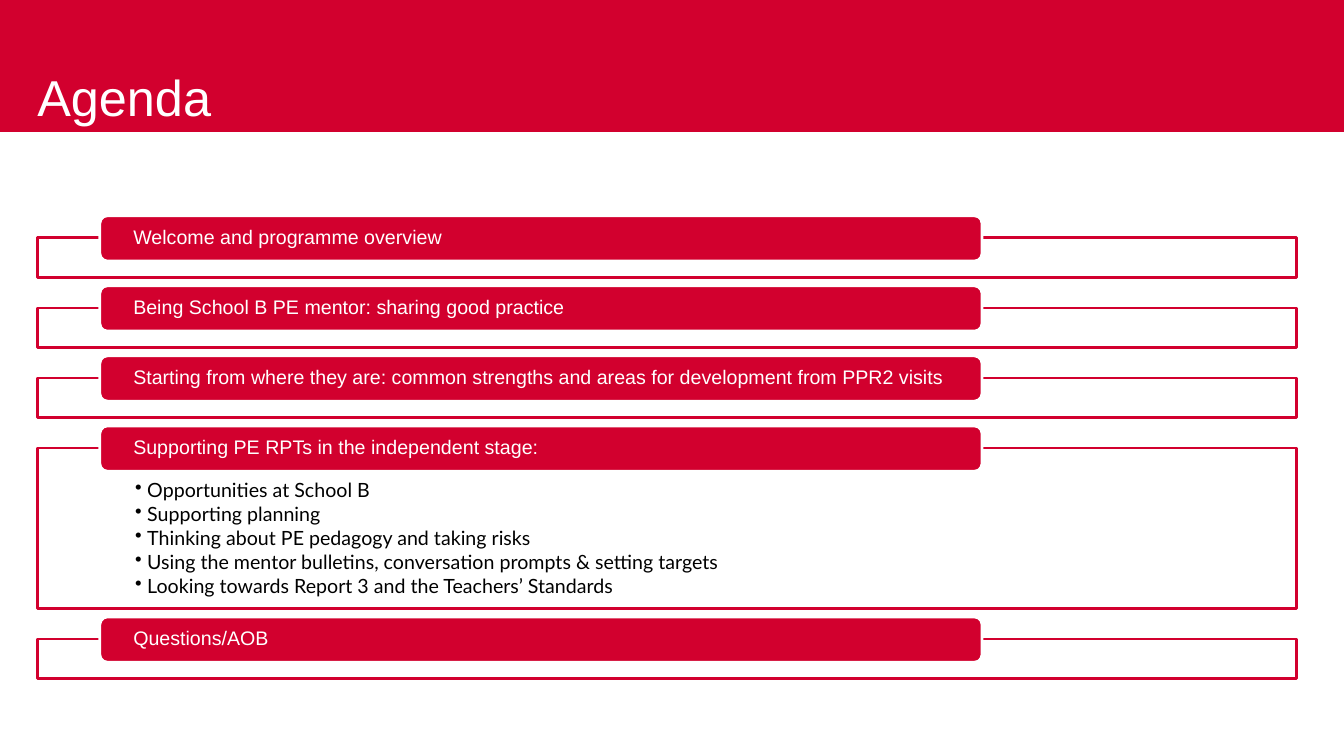
from lxml.etree import SubElement as Sub
from pptx import Presentation
from pptx.dml.color import RGBColor
from pptx.enum.shapes import MSO_SHAPE as Kind
from pptx.enum.text import MSO_ANCHOR as Anchor, MSO_AUTO_SIZE as Fit, PP_ALIGN as Align
from pptx.oxml.ns import qn
from pptx.util import Inches, Pt

RED = RGBColor(0xD2, 0x00, 0x2E)
WHITE = RGBColor(0xFF, 0xFF, 0xFF)
BLACK = RGBColor(0x00, 0x00, 0x00)

WIDE, HIGH = 13.33, 7.5
LEFT, SPAN = 0.37, 12.49
TOP, GAP = 2.36, 0.305
LOW, TALL = 0.39, 1.59

AGENDA = [
    ("Welcome and programme overview", []),
    ("Being School B PE mentor: sharing good practice", []),
    ("Starting from where they are: common strengths and areas "
     "for development from PPR2 visits", []),
    ("Supporting PE RPTs in the independent stage:", [
        "Opportunities at School B",
        "Supporting planning",
        "Thinking about PE pedagogy and taking risks",
        "Using the mentor bulletins, conversation prompts & setting targets",
        "Looking towards Report 3 and the Teachers’ Standards",
    ]),
    ("Questions/AOB", []),
]


def put(item, **values):
    for name, value in values.items():
        setattr(item, name, value)


def set_frame(frame, anchor, left=0, top=0, right=0, bottom=0):
    put(frame, word_wrap=True, auto_size=Fit.NONE, vertical_anchor=anchor,
        margin_left=Inches(left), margin_top=Inches(top),
        margin_right=Inches(right), margin_bottom=Inches(bottom))


def set_text(para, text, face, size, color, space=0.9, after=0):
    para.text = text
    put(para, alignment=Align.LEFT, line_spacing=space, space_after=Pt(after))
    put(para.font, name=face, size=Pt(size))
    para.font.color.rgb = color


def add_box(slide, kind, area, fill, line=None):
    box = slide.shapes.add_shape(kind, *map(Inches, area))
    box.shadow.inherit = False
    box.fill.solid()
    box.fill.fore_color.rgb = fill
    if line is None:
        box.line.fill.background()
    else:
        box.line.color.rgb = line
        box.line.width = Pt(2)
    return box


def add_bullet(para):
    props = para._p.get_or_add_pPr()
    props.set("marL", str(Inches(0.12)))
    props.set("indent", str(-Inches(0.12)))
    Sub(props, qn("a:buChar")).set("char", "•")


def add_frame(slide, top, height, points):
    box = add_box(slide, Kind.RECTANGLE, (LEFT, top, SPAN, height), WHITE, RED)
    tint = box.fill._xPr.find(".//" + qn("a:srgbClr"))
    Sub(tint, qn("a:alpha")).set("val", "90000")
    if not points:
        return
    frame = box.text_frame
    set_frame(frame, Anchor.TOP, 0.97, 0.32, 0.97, 0.11)
    for n, point in enumerate(points):
        para = frame.add_paragraph() if n else frame.paragraphs[0]
        add_bullet(para)
        set_text(para, point, "Lato", 14, BLACK, after=2.1)


def add_label(slide, top, text):
    box = add_box(slide, Kind.ROUNDED_RECTANGLE, (0.99, top, 8.75, 0.45),
                  RED, WHITE)
    set_frame(box.text_frame, Anchor.MIDDLE, left=0.31, right=0.31)
    set_text(box.text_frame.paragraphs[0], text, "Arial", 14, WHITE)


def add_title(slide, text):
    title = slide.shapes.title
    put(title, left=Inches(LEFT), top=Inches(0.21),
        width=Inches(SPAN), height=Inches(1.04))
    set_frame(title.text_frame, Anchor.BOTTOM)
    set_text(title.text_frame.paragraphs[0], text, "Arial", 36, WHITE, 0.8)
    # Red page and white panel behind the title
    for top, color in ((0, RED), (1.31, WHITE)):
        back = add_box(slide, Kind.RECTANGLE, (0, top, WIDE, HIGH - top), color)
        title._element.addprevious(back._element)


def main():
    deck = Presentation()
    put(deck, slide_width=Inches(WIDE), slide_height=Inches(HIGH))
    slide = deck.slides.add_slide(deck.slide_layouts[5])
    add_title(slide, "Agenda")

    # Agenda items, stacked with equal gaps
    top = TOP
    for text, points in AGENDA:
        height = TALL if points else LOW
        add_frame(slide, top, height, points)
        add_label(slide, top - 0.22, text)
        top += height + GAP
    deck.save("out.pptx")


if __name__ == "__main__":
    main()
